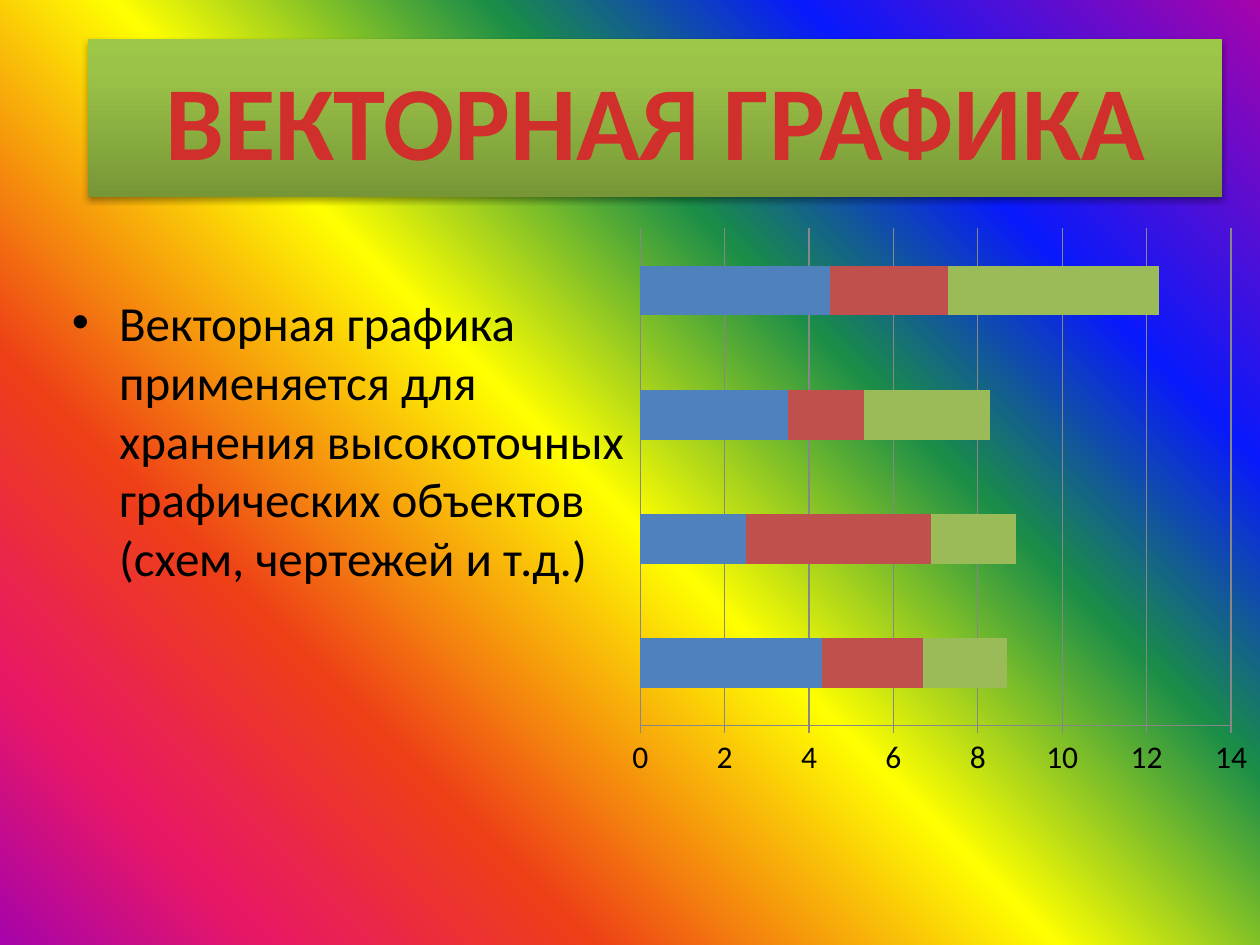
from dataclasses import dataclass

from lxml.etree import SubElement
from pptx import Presentation
from pptx.chart.data import CategoryChartData
from pptx.dml.color import RGBColor
from pptx.enum.chart import XL_CHART_TYPE, XL_TICK_MARK
from pptx.enum.shapes import MSO_SHAPE
from pptx.enum.text import MSO_ANCHOR, PP_ALIGN
from pptx.oxml import parse_xml
from pptx.oxml.ns import nsdecls, qn
from pptx.util import Pt


@dataclass(frozen=True)
class Theme:
    font: str = "Calibri"
    title_size: int = 60
    body_size: int = 28
    chart_size: int = 18
    text: str = "000000"
    grid: str = "878787"
    series: tuple = ("4F81BD", "C0504D", "9BBB59")
    rainbow: tuple = ((0, "A603AB"), (21, "0819FB"), (35, "1A8D48"), (52, "FFFF00"),
                      (73, "EE3F17"), (88, "E81766"), (100, "A603AB"))
    banner: tuple = ((0, "779737"), (80, "9BC348"), (100, "9DC746"))
    title: tuple = ((0, "FC7C7A"), (75, "D02F2C"), (100, "C70500"))


THEME = Theme()
CORNER = '<a:path path="circle"><a:fillToRect l="100000" b="100000"/></a:path>'


def linear(angle):
    return f'<a:lin ang="{angle * 60000}" scaled="0"/>'


def gradient(stops, direction):
    gs = "".join(f'<a:gs pos="{pos * 1000}"><a:srgbClr val="{color}"/></a:gs>'
                 for pos, color in stops)
    return parse_xml(f'<a:gradFill {nsdecls("a")} rotWithShape="1">'
                     f'<a:gsLst>{gs}</a:gsLst>{direction}</a:gradFill>')


def replace_fill(props, fill):
    old = props.find(qn("a:solidFill"))
    props.replace(old, fill)


def solid(fill, color):
    fill.solid()
    fill.fore_color.rgb = RGBColor.from_string(color)


def style_font(font, size, color=THEME.text):
    font.name = THEME.font
    font.size = Pt(size)
    font.color.rgb = RGBColor.from_string(color)


def set_indent(p, points):
    pPr = p._p.get_or_add_pPr()
    pPr.set("marL", str(Pt(points)))
    pPr.set("indent", str(-Pt(points)))
    return pPr


def set_background(s):
    solid(s.background.fill, THEME.text)
    replace_fill(s.background._cSld.bg.bgPr, gradient(THEME.rainbow, CORNER))


def add_title(s, box, text):
    sp = s.shapes.add_shape(MSO_SHAPE.RECTANGLE, *map(Pt, box))
    sp.line.fill.background()
    solid(sp.fill, THEME.banner[0][1])
    props = sp._element.spPr
    replace_fill(props, gradient(THEME.banner, linear(270)))
    sp.shadow.inherit = False
    shadow = SubElement(props.find(qn("a:effectLst")), qn("a:outerShdw"),
                        blurRad=str(Pt(3.1)), dist=str(Pt(1.8)),
                        dir="5400000", rotWithShape="0")
    color = SubElement(shadow, qn("a:srgbClr"), val="000000")
    SubElement(color, qn("a:alpha"), val="35000")
    tf = sp.text_frame
    tf.word_wrap = True
    tf.vertical_anchor = MSO_ANCHOR.MIDDLE
    p = tf.paragraphs[0]
    p.alignment = PP_ALIGN.CENTER
    set_indent(p, 40)
    r = p.add_run()
    r.text = text
    style_font(r.font, THEME.title_size, THEME.title[1][1])
    r.font.bold = True
    replace_fill(r._r.rPr, gradient(THEME.title, linear(90)))


def add_body(s, box, text):
    tf = s.shapes.add_textbox(*map(Pt, box)).text_frame
    tf.word_wrap = True
    p = tf.paragraphs[0]
    p.space_before = Pt(0.2 * THEME.body_size)
    pPr = set_indent(p, 27)
    SubElement(pPr, qn("a:buFont"), typeface="Arial")
    SubElement(pPr, qn("a:buChar"), char="•")
    r = p.add_run()
    r.text = text
    style_font(r.font, THEME.body_size)


def add_bars(s, box, categories, series):
    data = CategoryChartData()
    data.categories = categories
    for name, values in series.items():
        data.add_series(name, values)
    chart = s.shapes.add_chart(XL_CHART_TYPE.BAR_STACKED, *map(Pt, box), data).chart
    chart.has_legend = False
    chart.has_title = False
    style_font(chart.font, THEME.chart_size)
    chart.category_axis.visible = False
    axis = chart.value_axis
    axis.major_tick_mark = XL_TICK_MARK.CROSS
    axis.has_major_gridlines = True
    for line in (axis.format.line, axis.major_gridlines.format.line):
        line.color.rgb = RGBColor.from_string(THEME.grid)
        line.width = Pt(0.75)
    plot = chart.plots[0]
    plot.vary_by_categories = False
    plot.gap_width = 150
    plot.overlap = 100
    for bars, color in zip(plot.series, THEME.series):
        solid(bars.format.fill, color)


def main():
    prs = Presentation()
    prs.slide_width, prs.slide_height = Pt(720), Pt(540)
    s = prs.slides.add_slide(prs.slide_layouts[6])
    set_background(s)
    add_body(s, (34, 163.5, 330, 290),
             "Векторная графика применяется для хранения высокоточных "
             "графических объектов (схем, чертежей и т.д.)")
    add_bars(s, (354, 124, 366, 326), ("1", "2", "3", "4"), {
        "Series 1": (4.3, 2.5, 3.5, 4.5),
        "Series 2": (2.4, 4.4, 1.8, 2.8),
        "Series 3": (2, 2, 3, 5),
    })
    add_title(s, (50.5, 22.5, 648, 90), "ВЕКТОРНАЯ ГРАФИКА")
    prs.save("out.pptx")


if __name__ == "__main__":
    main()
